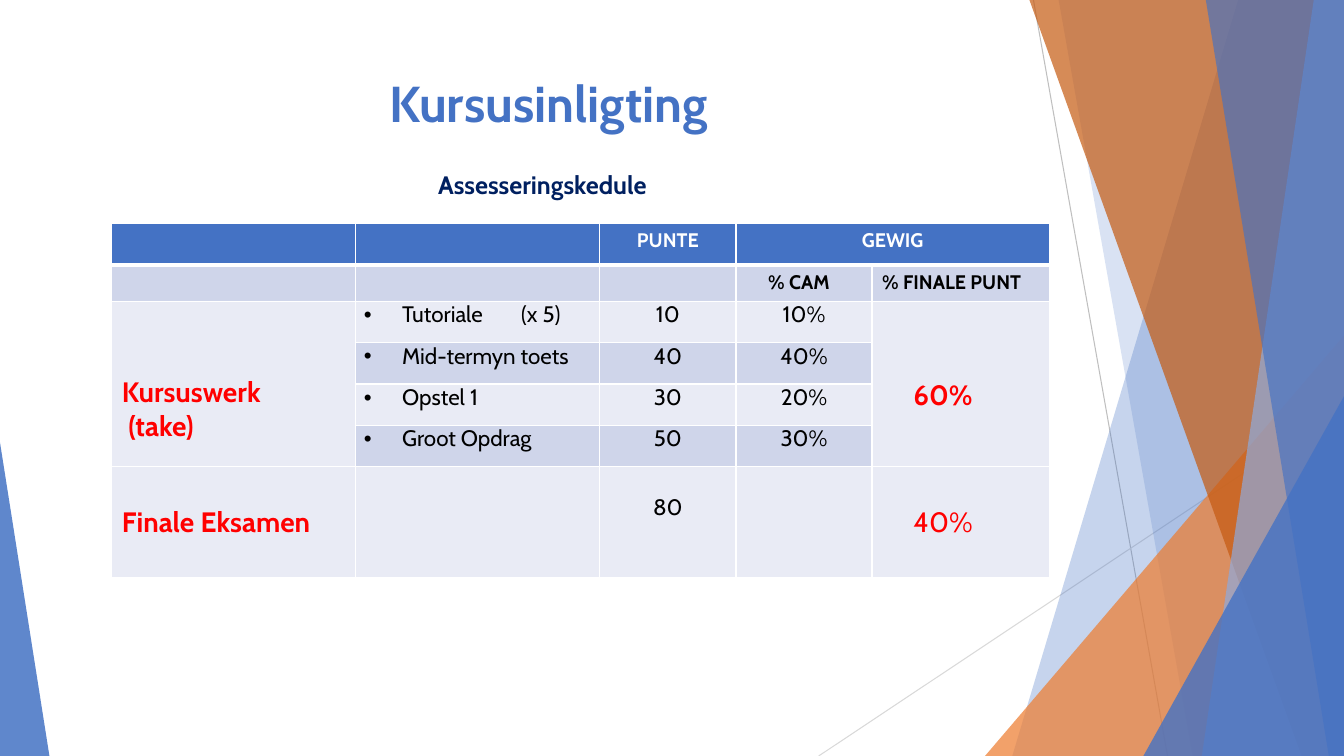
from dataclasses import dataclass, field
from typing import Any

import pptx
import pptx.dml.color
import pptx.enum.shapes
import pptx.enum.text
import pptx.oxml
import pptx.oxml.ns
import pptx.util

Inches = pptx.util.Inches
Pt = pptx.util.Pt
RGBColor = pptx.dml.color.RGBColor
qn = pptx.oxml.ns.qn
SHAPE = pptx.enum.shapes.MSO_SHAPE
ALIGN = pptx.enum.text.PP_ALIGN

BLUE = RGBColor(0x44, 0x72, 0xC4)
LIGHT_BLUE = RGBColor(0x8F, 0xAA, 0xDC)
NAVY = RGBColor(0x00, 0x20, 0x60)
ORANGE = RGBColor(0xED, 0x7D, 0x31)
RUST = RGBColor(0xC5, 0x5A, 0x11)
RED = RGBColor(0xFF, 0x00, 0x00)
BLACK = RGBColor(0x00, 0x00, 0x00)
WHITE = RGBColor(0xFF, 0xFF, 0xFF)
GREY = RGBColor(0xBF, 0xBF, 0xBF)
LIGHT_GREY = RGBColor(0xD9, 0xD9, 0xD9)
BAND_DARK = RGBColor(0xCF, 0xD5, 0xEA)
BAND_LIGHT = RGBColor(0xE9, 0xEB, 0xF5)

WIDTH, HEIGHT = 13.33, 7.5
FONT = "Cabin"


@dataclass(frozen=True)
class Ray:
    start: tuple[float, float]
    end: tuple[float, float]
    color: RGBColor


@dataclass(frozen=True)
class Band:
    """A full-height strip from a slanted left edge to the right side of the slide."""
    top_x: float
    bottom_x: float
    color: RGBColor
    opacity: int


@dataclass(frozen=True)
class Corner:
    left: float
    top: float
    width: float
    apex: float
    color: RGBColor
    opacity: int


@dataclass(frozen=True)
class Entry:
    row: int
    col: int
    text: str
    font: dict[str, Any]
    margins: dict[str, float] = field(default_factory=dict)
    align: Any = ALIGN.LEFT
    bullet: bool = False


RAYS = [
    Ray((10.25, 0), (11.58, HEIGHT), GREY),
    Ray((WIDTH, 4.03), (8.12, HEIGHT), LIGHT_GREY),
]
DECOR = [
    Band(12.28, 10.04, BLUE, 30),
    Band(10.5, 11.83, BLUE, 20),
    Corner(9.77, 3.33, 3.56, 1, ORANGE, 72),
    Band(10.21, 12.91, RUST, 70),
    Band(13.03, 11.92, LIGHT_BLUE, 70),
    Band(11.96, 13.18, BLUE, 65),
    Corner(11.34, 3.93, 1.99, 1, BLUE, 80),
    Corner(0, 4.39, 0.49, 0, BLUE, 85),
]

COL_WIDTHS = [2.42, 2.42, 1.35, 1.35, 1.76]
ROW_HEIGHTS = [0.41, 0.36, 0.41, 0.41, 0.41, 0.41, 1.1]
ROW_FILLS = [BLUE, BAND_DARK, BAND_LIGHT, BAND_DARK, BAND_LIGHT, BAND_DARK, BAND_LIGHT]
MERGES = [((0, 3), (0, 4)), ((2, 0), (5, 0)), ((2, 4), (5, 4))]

HEAD = {"size": Pt(14), "bold": True}
BODY = {"size": Pt(16), "bold": False}
KEY = {"size": Pt(20), "bold": True}
KEY_PLAIN = {"size": Pt(20), "bold": False}
TIGHT = {"margin_left": 0.08, "margin_right": 0.08, "margin_top": 0, "margin_bottom": 0}

TASKS = [
    ("Tutoriale\t(x 5)", "10", "10%"),
    ("Mid-termyn toets", "40", "40%"),
    ("Opstel 1", "30", "20%"),
    ("Groot Opdrag", "50", "30%"),
]
ENTRIES = [
    Entry(0, 2, "PUNTE", HEAD | {"color": WHITE}, align=ALIGN.CENTER),
    Entry(0, 3, "GEWIG", HEAD | {"color": WHITE}, align=ALIGN.CENTER),
    Entry(1, 3, "% CAM", HEAD, {"margin_left": 0.32}),
    Entry(1, 4, "% FINALE PUNT", HEAD),
    Entry(2, 0, "Kursuswerk\n (take)", KEY | {"color": RED}, {"margin_top": 0.73}),
    Entry(2, 4, "60%", KEY | {"color": RED}, {"margin_top": 0.76, "margin_left": 0.41}),
    Entry(6, 0, "Finale Eksamen", KEY | {"color": RED}, {"margin_top": 0.39}),
    Entry(6, 2, "80", BODY, TIGHT | {"margin_top": 0.27}, ALIGN.CENTER),
    Entry(6, 4, "40%", KEY_PLAIN | {"color": RED}, {"margin_top": 0.39, "margin_left": 0.41}),
]
for row, task in enumerate(TASKS, start=2):
    for col, text in enumerate(task, start=1):
        ENTRIES.append(Entry(row, col, text, BODY, TIGHT,
                             ALIGN.LEFT if col == 1 else ALIGN.CENTER, col == 1))


def add_xml(parent: Any, tag: str, **attrs: Any) -> Any:
    el = pptx.oxml.ns.qn(tag)
    child = parent.makeelement(el, {k: str(v) for k, v in attrs.items()})
    parent.append(child)
    return child


def draw_ray(slide: Any, ray: Ray) -> None:
    line = slide.shapes.add_connector(pptx.enum.shapes.MSO_CONNECTOR.STRAIGHT,
                                      *map(Inches, ray.start + ray.end))
    line.line.color.rgb = ray.color
    line.line.width = Pt(0.75)
    add_xml(line.element.spPr, "a:effectLst")


def draw_decor(slide: Any, item: Band | Corner) -> None:
    if isinstance(item, Band):
        points = [(WIDTH, 0), (WIDTH, HEIGHT), (item.bottom_x, HEIGHT)]
        outline = slide.shapes.build_freeform(Inches(item.top_x), 0)
        outline.add_line_segments([(Inches(x), Inches(y)) for x, y in points])
        sp = outline.convert_to_shape()
    else:
        sp = slide.shapes.add_shape(
            SHAPE.ISOSCELES_TRIANGLE, Inches(item.left), Inches(item.top),
            Inches(item.width), Inches(HEIGHT - item.top))
        sp.adjustments[0] = item.apex
    sp.shadow.inherit = False
    sp.fill.solid()
    sp.fill.fore_color.rgb = item.color
    sp.line.fill.background()
    color = sp.element.spPr.find(qn("a:solidFill")).find(qn("a:srgbClr"))
    add_xml(color, "a:alpha", val=item.opacity * 1000)


def write(tf: Any, text: str, font: dict[str, Any], align: Any) -> None:
    for i, line in enumerate(text.split("\n")):
        p = tf.paragraphs[0] if i == 0 else tf.add_paragraph()
        p.alignment = align
        r = p.add_run()
        r.text = line
        r.font.color.rgb = font.get("color", BLACK)
        for name in ("size", "bold"):
            setattr(r.font, name, font[name])
        r.font.name = FONT


def add_heading(slide: Any, box: tuple[float, ...], text: str, font: dict[str, Any]) -> None:
    tf = slide.shapes.add_textbox(*map(Inches, box)).text_frame
    tf.word_wrap = True
    write(tf, text, font, ALIGN.CENTER)


def style_cell(cell: Any, fill: RGBColor, bottom: float) -> None:
    tcPr = cell._tc.get_or_add_tcPr()
    for side, width in (("L", 1), ("R", 1), ("T", 1), ("B", bottom)):
        ln = add_xml(tcPr, f"a:ln{side}", w=Pt(width))
        add_xml(add_xml(ln, "a:solidFill"), "a:srgbClr", val=WHITE)
    cell.fill.solid()
    cell.fill.fore_color.rgb = fill
    cell.margin_top = cell.margin_bottom = 0


def add_bullet(p: Any) -> None:
    pPr = p._p.get_or_add_pPr()
    pPr.set("marL", str(Inches(0.38)))
    pPr.set("indent", str(Inches(-0.38)))
    add_xml(pPr, "a:buFont", typeface="Arial")
    add_xml(pPr, "a:buChar", char="•")
    add_xml(add_xml(pPr, "a:tabLst"), "a:tab", pos=Inches(1.56), algn="l")


def add_schedule(slide: Any) -> None:
    table = slide.shapes.add_table(
        len(ROW_HEIGHTS), len(COL_WIDTHS), Inches(1.11), Inches(2.22),
        Inches(sum(COL_WIDTHS)), Inches(sum(ROW_HEIGHTS))).table
    for column, width in zip(table.columns, COL_WIDTHS):
        column.width = Inches(width)
    for i, (height, fill) in enumerate(zip(ROW_HEIGHTS, ROW_FILLS)):
        table.rows[i].height = Inches(height)
        for cell in table.rows[i].cells:
            style_cell(cell, fill, 3 if i == 0 else 1)
    for first, last in MERGES:
        table.cell(*first).merge(table.cell(*last))
    for entry in ENTRIES:
        cell = table.cell(entry.row, entry.col)
        for name, value in ({"margin_top": 0.05} | entry.margins).items():
            setattr(cell, name, Inches(value))
        write(cell.text_frame, entry.text, entry.font, entry.align)
        if entry.bullet:
            add_bullet(cell.text_frame.paragraphs[0])


def main() -> None:
    prs = pptx.Presentation()
    prs.slide_width, prs.slide_height = Inches(WIDTH), Inches(HEIGHT)
    slide = prs.slides.add_slide(prs.slide_layouts[6])
    for ray in RAYS:
        draw_ray(slide, ray)
    for item in DECOR:
        draw_decor(slide, item)
    add_heading(slide, (0.74, 0.67, 9.4, 0.86), "Kursusinligting",
                {"size": Pt(36), "bold": True, "color": BLUE})
    add_heading(slide, (3.15, 1.63, 4.46, 0.4), "Assesseringskedule",
                {"size": Pt(18), "bold": True, "color": NAVY})
    add_schedule(slide)
    prs.save("out.pptx")


if __name__ == "__main__":
    main()
